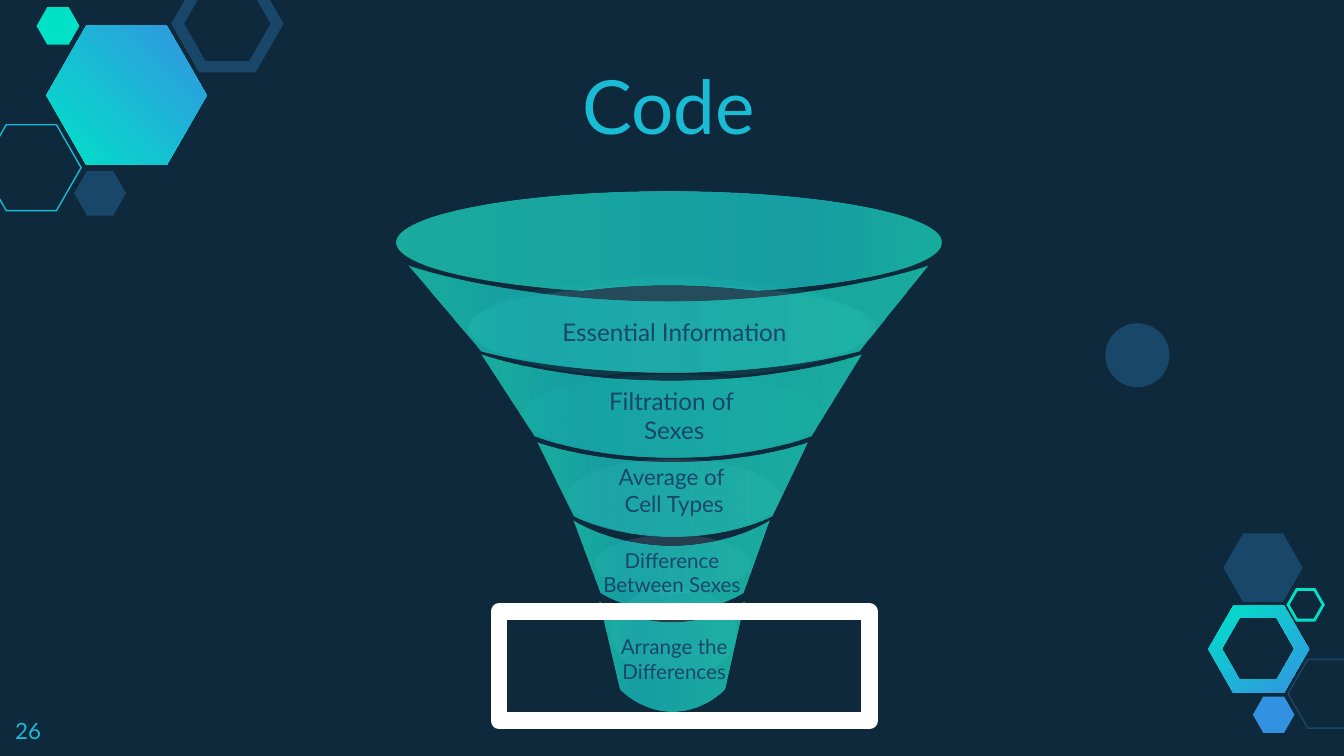
from pptx import Presentation
from pptx.dml.color import RGBColor
from pptx.enum.shapes import MSO_SHAPE
from pptx.enum.text import MSO_ANCHOR, PP_ALIGN
from pptx.oxml.ns import qn
from pptx.oxml.xmlchemy import OxmlElement
from pptx.util import Pt

COLORS = {
    "background": "0E293C", "navy": "184769", "cyan": "19BBD5",
    "green": "00E1C6", "blue": "3292E1", "white": "FFFFFF",
}
HEXAGON_GRADIENT = [(0, "00E2C7"), (100, "3393E2")]
BAND_GRADIENT = [(0, "1CD9BD"), (25, "1BC5C5"), (100, "1ED7BE")]
OVAL_GRADIENT = [(0, "1ED7BE"), (75, "1BC5C5"), (100, "1CD9BD")]
GLOW_GRADIENT = [(0, "1CD9BD"), (20, "1BC5C5"), (100, "1ED7BE")]
INSET = 0.287
# Oval with a scooped underside, around its centre, for half axes of 1
SCOOPED_OVAL = [
    [(-0.32, 0.95)],
    [(-0.75, 0.79), (-1, 0.42), (-1, 0)],
    [(-1, -0.55), (-0.55, -1), (0, -1)],
    [(0.55, -1), (1, -0.55), (1, 0)],
    [(1, 0.42), (0.75, 0.79), (0.32, 0.95)],
    [(0.11, 0.8), (-0.11, 0.8), (-0.32, 0.95)],
]


def rgb(name):
    return RGBColor.from_string(COLORS[name])


def append_child(parent, tag, **attributes):
    child = OxmlElement(tag)
    for key, value in attributes.items():
        child.set(key, str(value))
    parent.append(child)
    return child


def set_alpha(color, percent):
    append_child(color, "a:alpha", val=percent * 1000)


def style(shape, fill=None, line=None, width=1, join="a:miter"):
    shape.shadow.inherit = False
    if fill:
        shape.fill.solid()
        shape.fill.fore_color.rgb = rgb(fill)
    else:
        shape.fill.background()
    if line:
        shape.line.color.rgb = rgb(line)
        shape.line.width = Pt(width)
        append_child(shape.line._get_or_add_ln(), join)
    else:
        shape.line.fill.background()


def fill_gradient(shape, stops, angle=0, alpha=100):
    style(shape)
    gradient = OxmlElement("a:gradFill")
    gradient.set("rotWithShape", "1")
    stop_list = append_child(gradient, "a:gsLst")
    for position, color in stops:
        stop = append_child(stop_list, "a:gs", pos=position * 1000)
        set_alpha(append_child(stop, "a:srgbClr", val=color), alpha)
    append_child(gradient, "a:lin", ang=angle * 60000, scaled=0)
    properties = shape.fill._xPr
    properties.replace(properties.find(qn("a:noFill")), gradient)


def add_preset(slide, kind, box):
    return slide.shapes.add_shape(kind, *map(Pt, box))


def add_outline(slide, *contours):
    """Each contour is a list of segments: one point is a line, three a curve."""
    builder = None
    for contour in contours:
        points = [(Pt(x), Pt(y)) for segment in contour for x, y in segment]
        if builder:
            builder.move_to(*points[0])
        else:
            builder = slide.shapes.build_freeform(*points[0], scale=1.0)
        builder.add_line_segments(points[1:], close=True)
    shape = builder.convert_to_shape()
    lines = shape._element.iter(qn("a:lnTo"))
    lines = iter(list(lines))
    for contour in contours:
        for segment in contour[1:]:
            steps = [next(lines) for _ in segment]
            if len(steps) == 3:
                curve = OxmlElement("a:cubicBezTo")
                steps[0].addprevious(curve)
                for step in steps:
                    curve.append(step[0])
                    step.getparent().remove(step)
    return shape


def add_hexagon(slide, box, **look):
    shape = add_preset(slide, MSO_SHAPE.HEXAGON, box)
    shape.adjustments[0] = INSET
    shape.adjustments[1] = 1.155
    style(shape, **look)
    return shape


def hexagon_contour(left, top, width, height):
    inset = INSET * height
    right, bottom, middle = left + width, top + height, top + height / 2
    return [[point] for point in (
        (left, middle), (left + inset, top), (right - inset, top),
        (right, middle), (right - inset, bottom), (left + inset, bottom))]


def add_hexagon_ring(slide, outer, inner):
    ring = add_outline(slide, hexagon_contour(*outer), hexagon_contour(*inner))
    fill_gradient(ring, HEXAGON_GRADIENT, 55)


def add_hexagons(slide):
    add_hexagon_ring(slide, (647.3, 324.4, 54, 46.8), (654.6, 331, 38.8, 33.2))
    large = add_hexagon(slide, (24.8, 13.8, 86, 74.6))
    fill_gradient(large, HEXAGON_GRADIENT, 315)
    for box, look in [
        ((-9.8, 66.8, 53.3, 46), dict(line="cyan", width=0.75)),
        ((39.7, 91.5, 27.8, 24), dict(fill="navy")),
        ((95.2, -10.3, 53.3, 46), dict(line="navy", width=6)),
        ((19.6, 3.9, 23, 20), dict(fill="green")),
        ((690, 353.3, 42.5, 36.8), dict(line="navy", width=0.75)),
        ((671.2, 373.2, 22.3, 19.4), dict(fill="blue")),
        ((655.4, 285.8, 42.5, 36.7), dict(fill="navy")),
        ((690, 315.8, 18.9, 16.4), dict(line="green", width=1.5)),
    ]:
        add_hexagon(slide, box, **look)


def sagging_arc(left, right, top, bottom):
    """The start and two curves of a hanging edge."""
    half, sag = (right - left) / 2, bottom - top
    middle, shoulder = left + half, top + 0.55 * sag
    return [
        [(left, top)],
        [(left + 0.23 * half, shoulder), (left + 0.6 * half, bottom),
         (middle, bottom)],
        [(right - 0.6 * half, bottom), (right - 0.23 * half, shoulder),
         (right, top)],
    ]


def add_band(slide, upper, lower):
    """Each edge is left, right, height of its ends, height of its middle."""
    left, right, top, bottom = lower
    contour = sagging_arc(*upper) + sagging_arc(right, left, top, bottom)
    fill_gradient(add_outline(slide, contour), BAND_GRADIENT, alpha=75)


def add_scooped_oval(slide, box, stops, alpha):
    left, top, width, height = box
    contour = [[(left + width / 2 * (1 + x), top + height / 2 * (1 + y))
                for x, y in segment] for segment in SCOOPED_OVAL]
    fill_gradient(add_outline(slide, contour), stops, alpha=alpha)


def add_funnel(slide):
    for box in [(327.5, 314.5, 67, 49), (250.5, 152.5, 219, 47),
                (319, 286.5, 83, 31.5), (304, 246, 114, 41)]:
        glow = add_preset(slide, MSO_SHAPE.OVAL, box)
        style(glow, fill="white")
        set_alpha(glow.fill._xPr.find(qn("a:solidFill"))[0], 10)
    tinted = add_preset(slide, MSO_SHAPE.OVAL, (280, 201, 160, 43))
    fill_gradient(tinted, GLOW_GRADIENT, alpha=10)
    add_scooped_oval(slide, (252, 149, 214, 53.5), GLOW_GRADIENT, 10)
    for upper, lower in [
        ((219, 497.5, 142.5, 161.5), (258, 460.5, 188, 199.5)),
        ((258, 461.5, 190, 204), (286.5, 434.5, 233.5, 245)),
        ((288, 432.5, 237, 247.5), (307.5, 413.5, 276.5, 287.5)),
        ((307.5, 412.5, 279, 292.5), (322, 398.5, 317.5, 327.5)),
        ((321, 399, 322.5, 333.5), (332, 388.5, 369, 381)),
    ]:
        add_band(slide, upper, lower)
    add_scooped_oval(slide, (212.5, 102.5, 292, 54.5), OVAL_GRADIENT, 75)


def add_text(slide, box, lines, size, color, align=PP_ALIGN.CENTER,
             anchor=MSO_ANCHOR.TOP, lead=0):
    frame = slide.shapes.add_textbox(*map(Pt, box)).text_frame
    frame.word_wrap = True
    frame.vertical_anchor = anchor
    frame.margin_left = frame.margin_right = frame.margin_bottom = Pt(7.2)
    frame.margin_top = Pt(7.2 + lead)
    for index, line in enumerate(lines):
        paragraph = frame.paragraphs[0] if index == 0 else frame.add_paragraph()
        paragraph.alignment = align
        run = paragraph.add_run()
        run.text = line
        run.font.name = "Lato"
        run.font.size = Pt(size)
        run.font.color.rgb = rgb(color)


def add_funnel_labels(slide):
    for left, top, height, lead, size, lines in [
        (232, 282.2, 49, 4, 11, ["Difference", "Between Sexes"]),
        (233.2, 329, 49, 3.6, 11, ["Arrange the", "Differences"]),
        (233.2, 155.5, 46, 13.4, 13, ["Essential Information"]),
        (233.2, 199.8, 46, 0, 13, ["Filtration of ", "Sexes"]),
        (233.2, 237.5, 49, 3.6, 12, ["Average of ", "Cell Types"]),
    ]:
        add_text(slide, (left, top, 256, height), lines, size, "navy", lead=lead)


def main():
    presentation = Presentation()
    presentation.slide_width, presentation.slide_height = Pt(720), Pt(405)
    slide = presentation.slides.add_slide(presentation.slide_layouts[6])
    slide.background.fill.solid()
    slide.background.fill.fore_color.rgb = rgb("background")
    add_hexagons(slide)
    add_text(slide, (242.8, 36, 231, 51), ["Code"], 40, "cyan",
             anchor=MSO_ANCHOR.BOTTOM)
    add_funnel(slide)
    circle = add_preset(slide, MSO_SHAPE.OVAL, (592.2, 173.2, 34.3, 34.3))
    style(circle, fill="navy")
    add_text(slide, (1, 376.8, 43, 28), ["26"], 12, "cyan", PP_ALIGN.LEFT)
    add_funnel_labels(slide)
    highlight = add_preset(slide, MSO_SHAPE.RECTANGLE, (267.3, 327.8, 198.5, 58.3))
    style(highlight, line="white", width=9, join="a:round")
    presentation.save("out.pptx")


if __name__ == "__main__":
    main()
